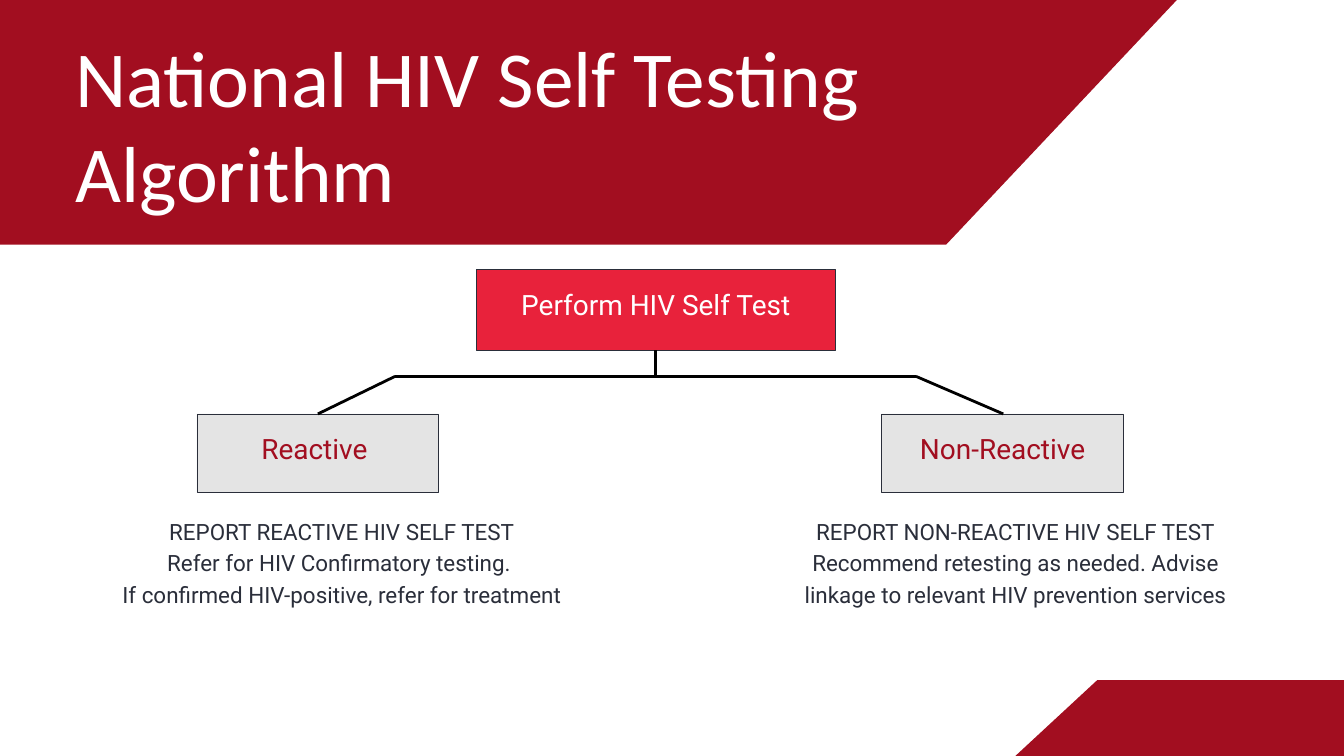
import dataclasses

import pptx
import pptx.dml.color
import pptx.enum.shapes
import pptx.enum.text
import pptx.oxml.ns
import pptx.util
from lxml import etree

Inches = pptx.util.Inches
Pt = pptx.util.Pt
Align = pptx.enum.text.PP_ALIGN
Anchor = pptx.enum.text.MSO_ANCHOR


@dataclasses.dataclass(frozen=True)
class Theme:
    crimson: str = "A20E20"
    red: str = "E8223B"
    grey: str = "E4E4E4"
    ink: str = "2A2E3A"
    white: str = "FFFFFF"
    black: str = "000000"
    heading_font: str = "Calibri"
    body_font: str = "Roboto"
    title_size: float = 85
    title_spacing: float = 102
    label_size: float = 30
    label_spacing: float = 42
    note_size: float = 24
    note_spacing: float = 33.6
    border: float = 0.75
    branch: float = 3


THEME = Theme()


def rgb(value):
    return pptx.dml.color.RGBColor.from_string(value)


def add_polygon(slide, points, color):
    corners = [(Inches(x), Inches(y)) for x, y in points]
    builder = slide.shapes.build_freeform(*corners[0])
    builder.add_line_segments(corners[1:], close=True)
    shape = builder.convert_to_shape()
    shape.shadow.inherit = False
    shape.fill.solid()
    shape.fill.fore_color.rgb = rgb(color)
    shape.line.fill.background()


def add_text(slide, box, lines, font, size, spacing, color,
             align=Align.CENTER, anchor=Anchor.TOP, inset=0):
    frame = slide.shapes.add_textbox(*map(Inches, box)).text_frame
    frame.word_wrap = True
    frame.vertical_anchor = anchor
    frame.margin_left = frame.margin_right = Inches(inset)
    frame.margin_top = frame.margin_bottom = Inches(inset)
    for index, line in enumerate(lines):
        paragraph = frame.add_paragraph() if index else frame.paragraphs[0]
        paragraph.alignment = align
        paragraph.line_spacing = Pt(spacing)
        run = paragraph.add_run()
        run.text = line
        run.font.name = font
        run.font.size = Pt(size)
        run.font.color.rgb = rgb(color)


def add_step(slide, box, label, fill, color):
    left, top, width, height = box
    shape = slide.shapes.add_shape(
        pptx.enum.shapes.MSO_SHAPE.RECTANGLE, *map(Inches, box))
    shape.shadow.inherit = False
    shape.fill.solid()
    shape.fill.fore_color.rgb = rgb(fill)
    shape.line.color.rgb = rgb(THEME.ink)
    shape.line.width = Pt(THEME.border)
    rise = 0.24
    add_text(slide, (left, top - rise, width, height + rise), [label],
             THEME.body_font, THEME.label_size, THEME.label_spacing, color,
             anchor=Anchor.MIDDLE, inset=0.06)


def add_note(slide, box, lines):
    add_text(slide, box, lines, THEME.body_font, THEME.note_size,
             THEME.note_spacing, THEME.ink)


def add_branch(slide, start, end):
    connector = slide.shapes.add_connector(
        pptx.enum.shapes.MSO_CONNECTOR.STRAIGHT,
        *map(Inches, (*start, *end)))
    connector.line.color.rgb = rgb(THEME.black)
    connector.line.width = Pt(THEME.branch)
    etree.SubElement(connector._element.spPr,
                     pptx.oxml.ns.qn("a:effectLst"))


def main():
    presentation = pptx.Presentation()
    presentation.slide_width = Inches(20)
    presentation.slide_height = Inches(11.25)
    slide = presentation.slides.add_slide(presentation.slide_layouts[6])

    add_polygon(slide, [(14.08, 3.64), (-0.23, 3.64), (-5.02, -1.45),
                        (18.88, -1.45)], THEME.crimson)
    add_text(slide, (1.12, 0.42, 13.11, 2.81),
             ["National HIV Self Testing Algorithm"], THEME.heading_font,
             THEME.title_size, THEME.title_spacing, THEME.white,
             align=Align.LEFT)

    add_step(slide, (7.09, 4.01, 5.34, 1.2), "Perform HIV Self Test",
             THEME.red, THEME.white)
    for left, label in ((2.93, "Reactive "), (13.12, "Non-Reactive")):
        add_step(slide, (left, 6.16, 3.6, 1.17), label,
                 THEME.grey, THEME.crimson)

    add_note(slide, (1.76, 7.64, 6.65, 1.38), [
        "REPORT REACTIVE HIV SELF TEST",
        "Refer for HIV Confirmatory testing. ",
        "If confirmed HIV-positive, refer for treatment"])
    add_note(slide, (11.65, 7.64, 6.92, 1.38), [
        "REPORT NON-REACTIVE HIV SELF TEST",
        "Recommend retesting as needed. Advise linkage to relevant "
        "HIV prevention services"])

    add_polygon(slide, [(16.33, 10.12), (20.19, 10.12), (21.41, 11.25),
                        (15.11, 11.25)], THEME.crimson)

    left_bend, right_bend = (5.88, 5.6), (13.63, 5.6)
    add_branch(slide, left_bend, right_bend)
    add_branch(slide, right_bend, (14.93, 6.16))
    add_branch(slide, (4.73, 6.16), left_bend)
    add_branch(slide, (9.76, 5.21), (9.76, 5.6))

    presentation.save("out.pptx")


if __name__ == "__main__":
    main()
